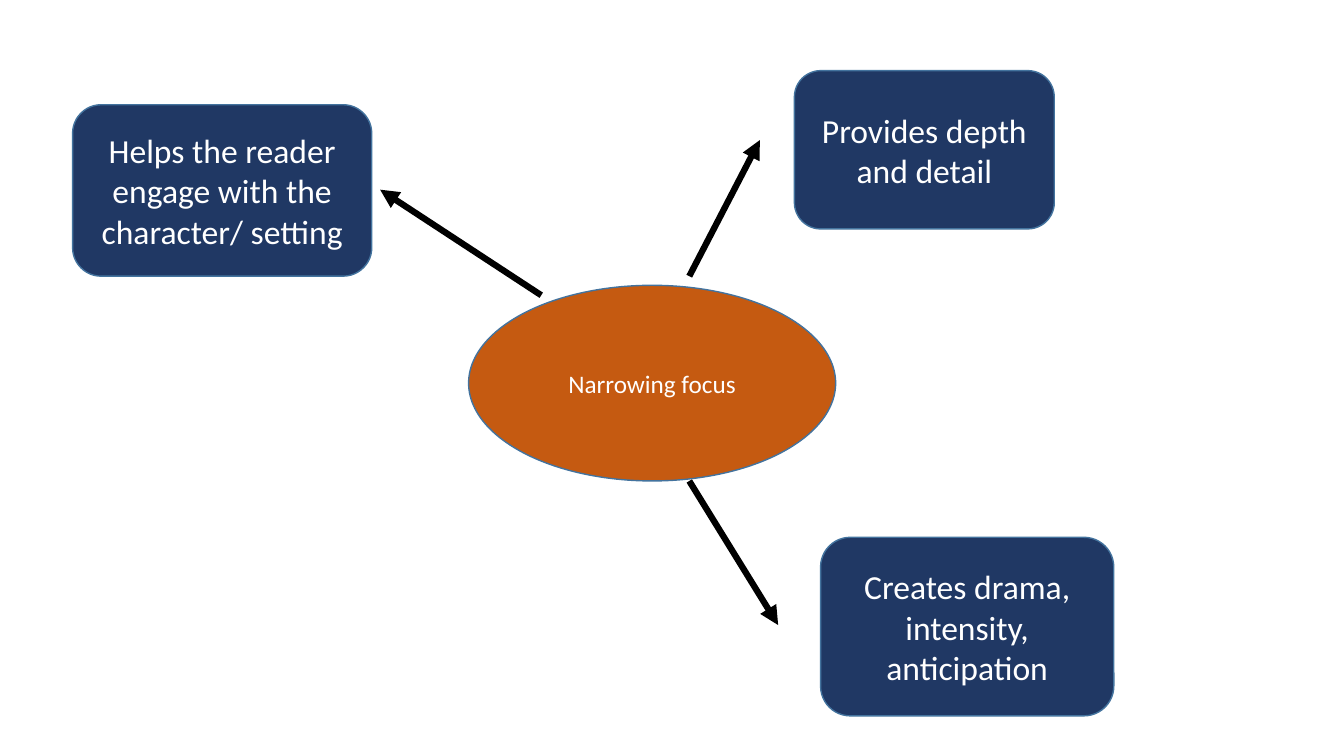
import dataclasses

import pptx
import pptx.dml.color
import pptx.enum.shapes
import pptx.enum.text
import pptx.oxml
import pptx.oxml.ns
import pptx.util

Cm = pptx.util.Cm
Pt = pptx.util.Pt
SHAPES = pptx.enum.shapes.MSO_SHAPE

# Content: places are (left, top, width, height), arrows (start, end), in cm
TOPIC = {"text": "Narrowing focus", "place": (11.81, 7.19, 9.25, 4.93)}
EFFECTS = [
    {"text": "Provides depth and detail",
     "place": (20.02, 1.78, 6.55, 3.99),
     "arrow": ((17.37, 6.96), (19.15, 3.53))},
    {"text": "Creates drama, intensity, anticipation",
     "place": (20.68, 13.54, 7.39, 4.5),
     "arrow": ((17.37, 12.12), (19.61, 15.75))},
    {"text": "Helps the reader engage with the character/ setting",
     "place": (1.83, 2.64, 7.54, 4.32),
     "arrow": ((13.64, 7.44), (9.58, 4.78))},
]


@dataclasses.dataclass(frozen=True)
class Theme:
    font: str = "Calibri"
    topic_size: int = 18
    effect_size: int = 24
    outline_width: float = 1
    arrow_width: float = 4.5
    topic_fill: str = "C55A11"
    effect_fill: str = "203864"
    outline: str = "43739E"
    text: str = "FFFFFF"
    arrow: str = "000000"


THEME = Theme()


def color(value):
    return pptx.dml.color.RGBColor.from_string(value)


def set_attributes(target, values):
    for name, value in values.items():
        setattr(target, name, value)


def add_bubble(slide, kind, item, fill, size):
    shape = slide.shapes.add_shape(kind, *map(Cm, item["place"]))
    shape.shadow.inherit = False
    shape.fill.solid()
    shape.fill.fore_color.rgb = color(fill)
    shape.line.color.rgb = color(THEME.outline)
    shape.line.width = Pt(THEME.outline_width)
    set_attributes(shape.text_frame, {
        "text": item["text"],
        "word_wrap": True,
        "vertical_anchor": pptx.enum.text.MSO_ANCHOR.MIDDLE,
    })
    paragraph = shape.text_frame.paragraphs[0]
    paragraph.alignment = pptx.enum.text.PP_ALIGN.CENTER
    font = paragraph.runs[0].font
    set_attributes(font, {"name": THEME.font, "size": Pt(size)})
    font.color.rgb = color(THEME.text)


def add_arrow(slide, start, end):
    connector = slide.shapes.add_connector(
        pptx.enum.shapes.MSO_CONNECTOR.STRAIGHT, *map(Cm, start + end))
    connector.line.color.rgb = color(THEME.arrow)
    connector.line.width = Pt(THEME.arrow_width)
    # Arrowhead at the end, no shadow
    head = pptx.oxml.parse_xml(
        f'<a:tailEnd {pptx.oxml.ns.nsdecls("a")} type="triangle"/>')
    connector.line._get_or_add_ln().append(head)
    no_effects = pptx.oxml.parse_xml(
        f'<a:effectLst {pptx.oxml.ns.nsdecls("a")}/>')
    connector._element.spPr.append(no_effects)


def main():
    presentation = pptx.Presentation()
    set_attributes(presentation, {"slide_width": Cm(33.87),
                                  "slide_height": Cm(19.05)})
    blank_layout = presentation.slide_layouts[6]
    slide = presentation.slides.add_slide(blank_layout)

    # Central topic
    add_bubble(slide, SHAPES.OVAL, TOPIC, THEME.topic_fill, THEME.topic_size)

    # Effects around it, each with its arrow
    for effect in EFFECTS:
        add_arrow(slide, *effect["arrow"])
        add_bubble(slide, SHAPES.ROUNDED_RECTANGLE, effect,
                   THEME.effect_fill, THEME.effect_size)

    presentation.save("out.pptx")


if __name__ == "__main__":
    main()
